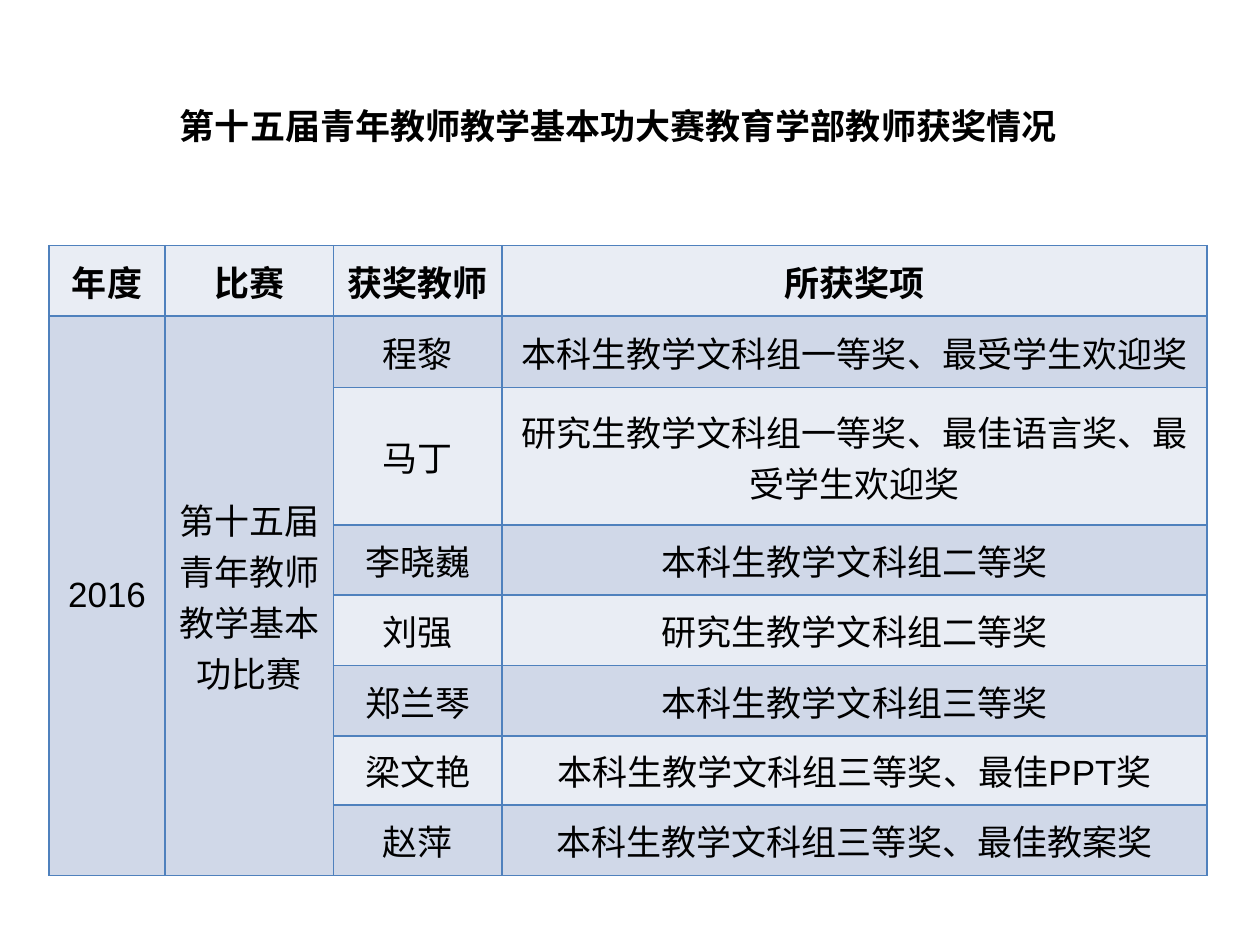
from lxml.etree import SubElement
from pptx import Presentation
from pptx.dml.color import RGBColor
from pptx.enum.text import MSO_ANCHOR, PP_ALIGN
from pptx.oxml.ns import qn
from pptx.util import Inches, Pt

BLACK = RGBColor(0x00, 0x00, 0x00)
BORDER_BLUE = RGBColor(0x4F, 0x81, 0xBD)
LIGHT_BAND = RGBColor(0xE9, 0xED, 0xF4)
DARK_BAND = RGBColor(0xD0, 0xD8, 0xE8)

TITLE = "第十五届青年教师教学基本功大赛教育学部教师获奖情况"
HEADINGS = ["年度", "比赛", "获奖教师", "所获奖项"]
YEAR = "2016"
CONTEST = "第十五届青年教师教学基本功比赛"
AWARDS = [
    ("程黎", "本科生教学文科组一等奖、最受学生欢迎奖"),
    ("马丁", "研究生教学文科组一等奖、最佳语言奖、最受学生欢迎奖"),
    ("李晓巍", "本科生教学文科组二等奖"),
    ("刘强", "研究生教学文科组二等奖"),
    ("郑兰琴", "本科生教学文科组三等奖"),
    ("梁文艳", "本科生教学文科组三等奖、最佳PPT奖"),
    ("赵萍", "本科生教学文科组三等奖、最佳教案奖"),
]
TEACHER_COLUMN = 2
COLUMN_WIDTHS = [0.92, 1.34, 1.34, 5.6]
ROW_HEIGHTS = [0.56, 0.57, 1.09, 0.56, 0.56, 0.56, 0.55, 0.56]


def set_font(paragraph, typeface, bold):
    font = paragraph.font
    font.name, font.size, font.bold = typeface, Pt(20), bold
    font.color.rgb = BLACK


def add_title(slide, left, top, width, height):
    frame = slide.shapes.add_textbox(left, top, width, height).text_frame
    frame.word_wrap = True
    frame.text = TITLE
    set_font(frame.paragraphs[0], "Arial", True)


def add_borders(cell):
    properties = cell._tc.get_or_add_tcPr()
    for side in ("a:lnL", "a:lnR", "a:lnT", "a:lnB"):
        line = SubElement(properties, qn(side), w=str(Pt(1)))
        fill = SubElement(line, qn("a:solidFill"))
        SubElement(fill, qn("a:srgbClr"), val=str(BORDER_BLUE))


def style_cell(cell, row, column):
    add_borders(cell)
    cell.fill.solid()
    cell.fill.fore_color.rgb = DARK_BAND if row % 2 else LIGHT_BAND
    cell.vertical_anchor = MSO_ANCHOR.MIDDLE
    cell.margin_left = cell.margin_right = Inches(0.07)
    cell.margin_top = cell.margin_bottom = 0
    is_header = row == 0
    is_teacher = column == TEACHER_COLUMN and not is_header
    paragraph = cell.text_frame.paragraphs[0]
    paragraph.alignment = PP_ALIGN.CENTER
    set_font(paragraph, "Calibri" if is_teacher else "Arial", is_header)


def add_award_table(slide, left, top, width, height):
    rows = [HEADINGS] + [("", "", *award) for award in AWARDS]
    table = slide.shapes.add_table(
        len(rows), len(HEADINGS), left, top, width, height).table
    for column, share in zip(table.columns, COLUMN_WIDTHS):
        column.width = int(width * share / sum(COLUMN_WIDTHS))
    for row, share in zip(table.rows, ROW_HEIGHTS):
        row.height = int(height * share / sum(ROW_HEIGHTS))

    for r, texts in enumerate(rows):
        for c, text in enumerate(texts):
            cell = table.cell(r, c)
            cell.text = text
            style_cell(cell, r, c)

    for c, shared_text in enumerate((YEAR, CONTEST)):
        first = table.cell(1, c)
        first.merge(table.cell(len(AWARDS), c))
        first.text_frame.paragraphs[0].add_run().text = shared_text


def main():
    presentation = Presentation()
    presentation.slide_width = Inches(10)
    presentation.slide_height = Inches(7.5)
    slide = presentation.slides.add_slide(presentation.slide_layouts[6])
    add_award_table(slide, Inches(0.39), Inches(1.95), Inches(9.19), Inches(5))
    add_title(slide, Inches(1.33), Inches(0.78), Inches(7.5), Inches(0.44))
    presentation.save("out.pptx")


if __name__ == "__main__":
    main()
